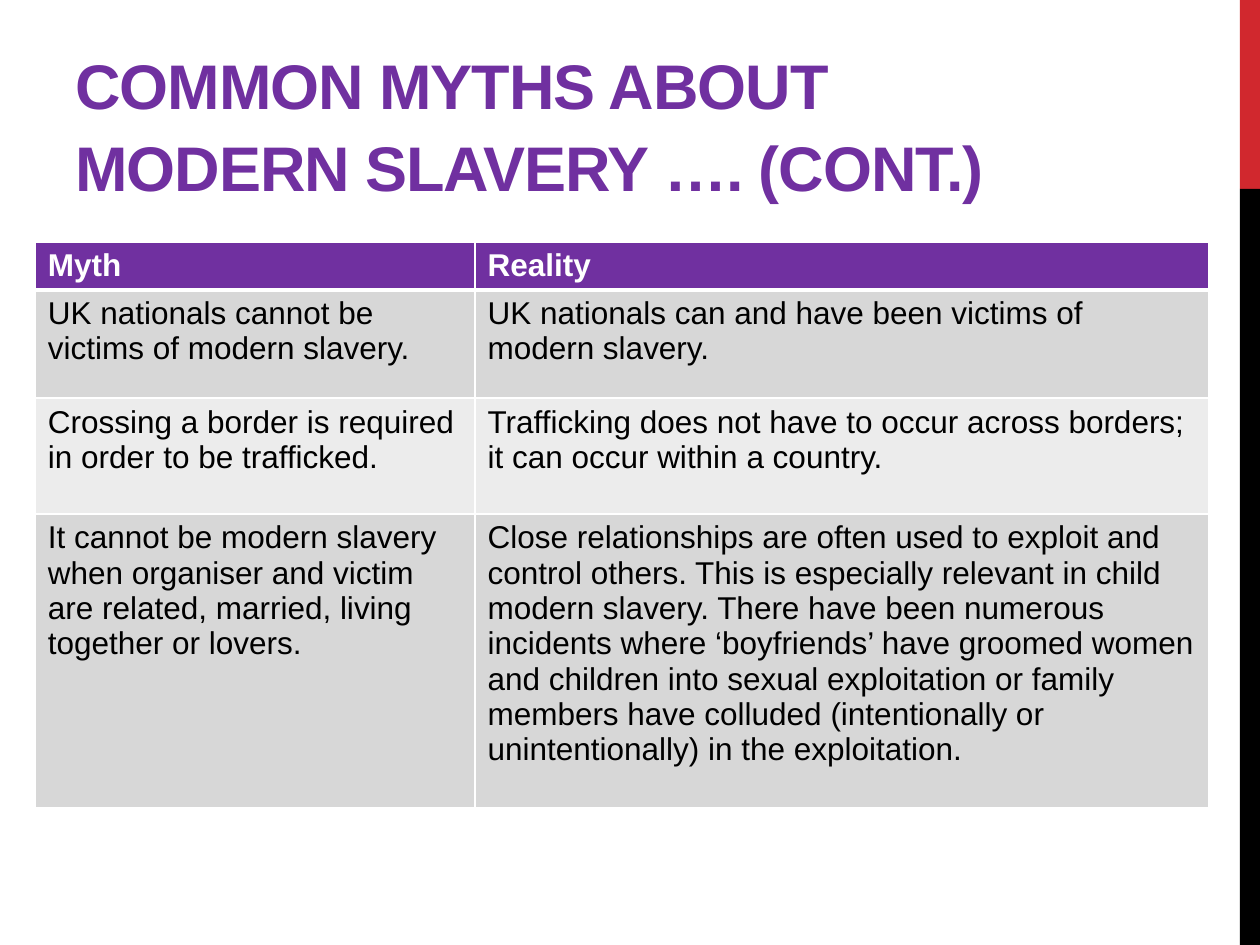
"""Build the slide on common myths about modern slavery."""
from lxml.etree import SubElement
from pptx import Presentation
from pptx.dml.color import RGBColor as Rgb
from pptx.enum.shapes import MSO_SHAPE as Shape
from pptx.enum.text import MSO_ANCHOR as Anchor
from pptx.oxml.ns import qn
from pptx.util import Inches, Pt

HUES = {"red": "D1282E", "black": "000000", "white": "FFFFFF",
        "violet": "7030A0", "grey": "D7D7D7", "pale": "ECECEC"}
ROWS = [
    ("Myth", "Reality"),
    ("UK nationals cannot be victims of modern slavery.",
     "UK nationals can and have been victims of modern slavery."),
    ("Crossing a border is required in order to be trafficked.",
     "Trafficking does not have to occur across borders; "
     "it can occur within a country."),
    ("It cannot be modern slavery when organiser and victim are related, "
     "married, living together or lovers.",
     "Close relationships are often used to exploit and control others. "
     "This is especially relevant in child modern slavery. There have been "
     "numerous incidents where ‘boyfriends’ have groomed women and children "
     "into sexual exploitation or family members have colluded "
     "(intentionally or unintentionally) in the exploitation."),
]
WIDTHS = [3.49, 5.82]
HEIGHTS = [0.38, 0.86, 0.92, 2.33]
FILLS = ["violet", "grey", "pale", "grey"]


def style(para, size, hue, bold):
    font = para.font
    font.name, font.size, font.bold = "Arial", Pt(size), bold
    font.color.rgb = Rgb.from_string(HUES[hue])


def edge(cell, side, width):
    line = SubElement(cell._tc.get_or_add_tcPr(), qn(f"a:ln{side}"), w=str(Pt(width)))
    fill = SubElement(line, qn("a:solidFill"))
    SubElement(fill, qn("a:srgbClr"), val=HUES["white"])


deck = Presentation()
deck.slide_width, deck.slide_height = Inches(10), Inches(7.5)
wide, high = deck.slide_width, deck.slide_height
slide = deck.slides.add_slide(deck.slide_layouts[6])

left = Inches(9.84)
for hue, top, share in [("red", 0, 0.2), ("black", 0.2, 0.8)]:
    bar = slide.shapes.add_shape(Shape.RECTANGLE, left, int(high * top),
                                 wide - left, int(high * share))
    bar.shadow.inherit = False
    bar.fill.solid()
    bar.fill.fore_color.rgb = Rgb.from_string(HUES[hue])
    bar.line.fill.background()

grid = slide.shapes.add_table(len(ROWS), len(WIDTHS), Inches(0.28), Inches(1.92),
                              Inches(sum(WIDTHS)), Inches(sum(HEIGHTS))).table
for col, width in zip(grid.columns, WIDTHS):
    col.width = Inches(width)
for i, (row, height, words) in enumerate(zip(grid.rows, HEIGHTS, ROWS)):
    row.height = Inches(height)
    for cell, text in zip(row.cells, words):
        head = i == 0
        cell.text = text
        style(cell.text_frame.paragraphs[0], 18, "white" if head else "black", head)
        for side in "LRTB":
            thick = (i, side) in [(0, "B"), (1, "T")]
            edge(cell, side, 3 if thick else 1)
        cell.fill.solid()
        cell.fill.fore_color.rgb = Rgb.from_string(HUES[FILLS[i]])

title = slide.shapes.add_textbox(Inches(0.5), Inches(0.17), Inches(8.33), Inches(1.5))
frame = title.text_frame
frame.word_wrap = True
frame.vertical_anchor = Anchor.BOTTOM
para = frame.paragraphs[0]
para.line_spacing = 1.08
run = para.add_run()
run.text = "COMMON MYTHS ABOUT MODERN SLAVERY …. (CONT.)"
style(para, 36, "violet", True)
run.font._element.set("spc", "-60")

deck.save("out.pptx")
